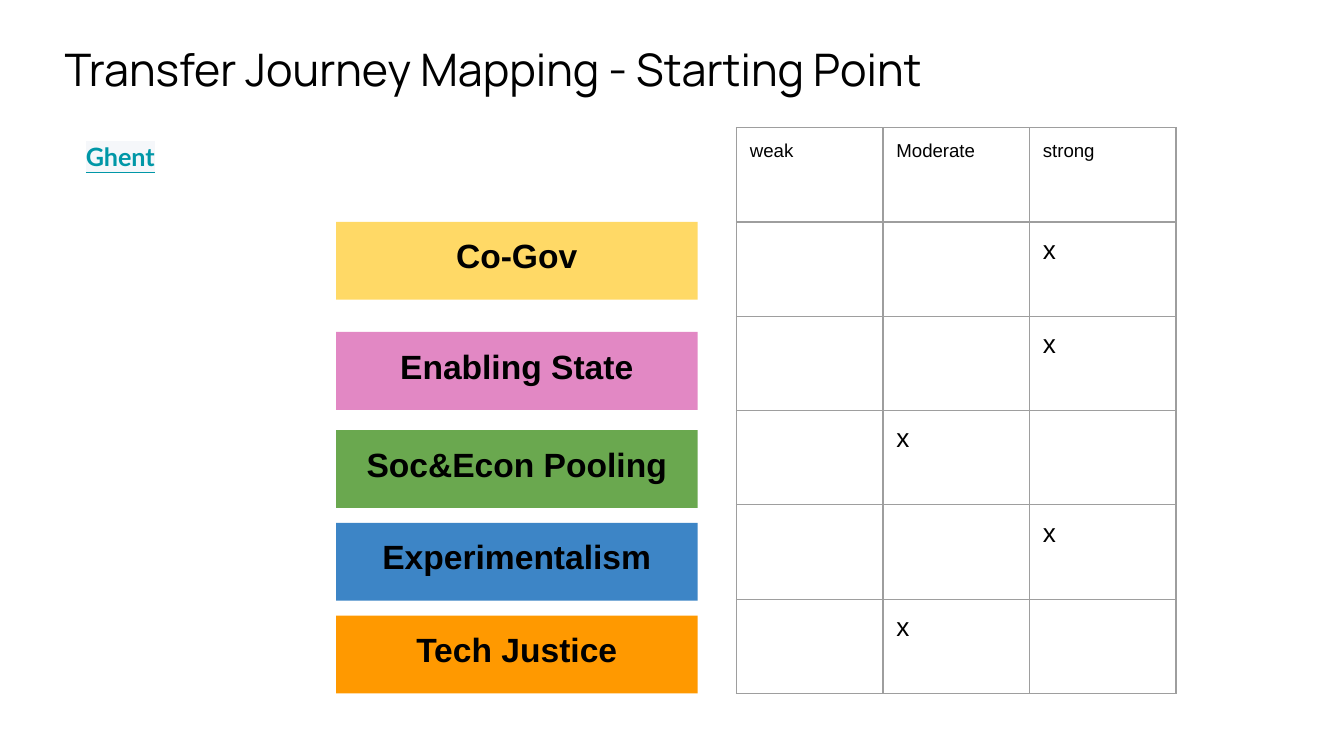
from lxml import etree
from pptx import Presentation
from pptx.dml.color import RGBColor
from pptx.enum.shapes import MSO_SHAPE
from pptx.enum.text import MSO_ANCHOR, MSO_AUTO_SIZE, PP_ALIGN
from pptx.oxml.ns import qn
from pptx.util import Inches, Pt

RECTANGLE = MSO_SHAPE.RECTANGLE
TOP = MSO_ANCHOR.TOP
LEFT, CENTER = PP_ALIGN.LEFT, PP_ALIGN.CENTER
NO_AUTOFIT = MSO_AUTO_SIZE.NONE

COLORS = {
    "text": "000000",
    "link": "0097A7",
    "highlight": "F5F7FA",
    "border": "9E9E9E",
    "yellow": "FFD966",
    "pink": "E288C4",
    "green": "6AA84F",
    "blue": "3D85C6",
    "orange": "FF9900",
}

# Principle, bar colour, bar top in inches, rating
PRINCIPLES = [
    ("Co-Gov", "yellow", 1.65, "strong"),
    ("Enabling State", "pink", 2.47, "strong"),
    ("Soc&Econ Pooling", "green", 3.2, "Moderate"),
    ("Experimentalism", "blue", 3.89, "strong"),
    ("Tech Justice", "orange", 4.58, "Moderate"),
]
RATINGS = ["weak", "Moderate", "strong"]
TABLE_WIDTH, TABLE_HEIGHT = Inches(3.27), Inches(4.21)
INSET = Inches(0.1)


def rgb(name):
    return RGBColor.from_string(COLORS[name])


def set_frame(frame):
    frame.word_wrap = True
    frame.auto_size = NO_AUTOFIT
    frame.vertical_anchor = TOP
    frame.margin_left = frame.margin_right = INSET
    frame.margin_top = frame.margin_bottom = INSET


def add_span(para, text, size, font="Arial", color="text", bold=False, align=LEFT):
    para.alignment = align
    span = para.add_run()
    span.text = text
    span.font.size = Pt(size)
    span.font.bold = bold
    span.font.color.rgb = rgb(color)
    span.font.name = font
    return span


def add_highlight(span, color):
    """Put a highlight right after the text fill, where the schema wants it."""
    highlight = etree.Element(qn("a:highlight"))
    etree.SubElement(highlight, qn("a:srgbClr"), val=COLORS[color])
    span.font._element.find(qn("a:solidFill")).addnext(highlight)


def add_title(page, text):
    title = page.shapes.title
    title.left, title.top = Inches(0.38), Inches(0.21)
    title.width, title.height = Inches(8.32), Inches(0.75)
    set_frame(title.text_frame)
    add_span(title.text_frame.paragraphs[0], text, 24, "Manrope")


def add_city(page, name):
    box = page.shapes.add_textbox(Inches(0.54), Inches(0.95), Inches(2.51), Inches(0.68))
    set_frame(box.text_frame)
    span = add_span(box.text_frame.paragraphs[0], name, 13.5, "Lato", "link", bold=True)
    span.font.underline = True
    add_highlight(span, "highlight")


def add_bar(page, label, color, top):
    bar = page.shapes.add_shape(
        RECTANGLE, Inches(2.5), Inches(top), Inches(2.69), Inches(0.58))
    bar.shadow.inherit = False
    bar.fill.solid()
    bar.fill.fore_color.rgb = rgb(color)
    bar.line.fill.background()
    set_frame(bar.text_frame)
    add_span(bar.text_frame.paragraphs[0], label, 18, bold=True, align=CENTER)


def set_borders(cell):
    properties = cell._tc.get_or_add_tcPr()
    for side in ("lnL", "lnR", "lnT", "lnB"):
        line = etree.SubElement(properties, qn(f"a:{side}"), w=str(Pt(0.75)))
        fill = etree.SubElement(line, qn("a:solidFill"))
        etree.SubElement(fill, qn("a:srgbClr"), val=COLORS["border"])


def fill_cell(cell, text, size):
    set_borders(cell)
    cell.fill.background()
    cell.margin_left = cell.margin_right = INSET
    cell.margin_top = cell.margin_bottom = INSET
    if text:
        add_span(cell.text_frame.paragraphs[0], text, size)


def add_rating_table(page):
    rows = [RATINGS]
    for *_, chosen in PRINCIPLES:
        rows.append(["x" if rating == chosen else "" for rating in RATINGS])
    table = page.shapes.add_table(
        len(rows), len(RATINGS), Inches(5.48), Inches(0.95),
        TABLE_WIDTH, TABLE_HEIGHT).table
    table.first_row = table.horz_banding = False
    for index, texts in enumerate(rows):
        for position, text in enumerate(texts):
            fill_cell(table.cell(index, position), text, 14 if index else 10)


def main():
    deck = Presentation()
    deck.slide_width = Inches(10)
    deck.slide_height = deck.slide_width * 9 // 16
    page = deck.slides.add_slide(deck.slide_layouts.get_by_name("Title Only"))
    add_title(page, "Transfer Journey Mapping - Starting Point")
    add_city(page, "Ghent")
    for label, color, top, _ in PRINCIPLES:
        add_bar(page, label, color, top)
    add_rating_table(page)
    deck.save("out.pptx")


if __name__ == "__main__":
    main()
